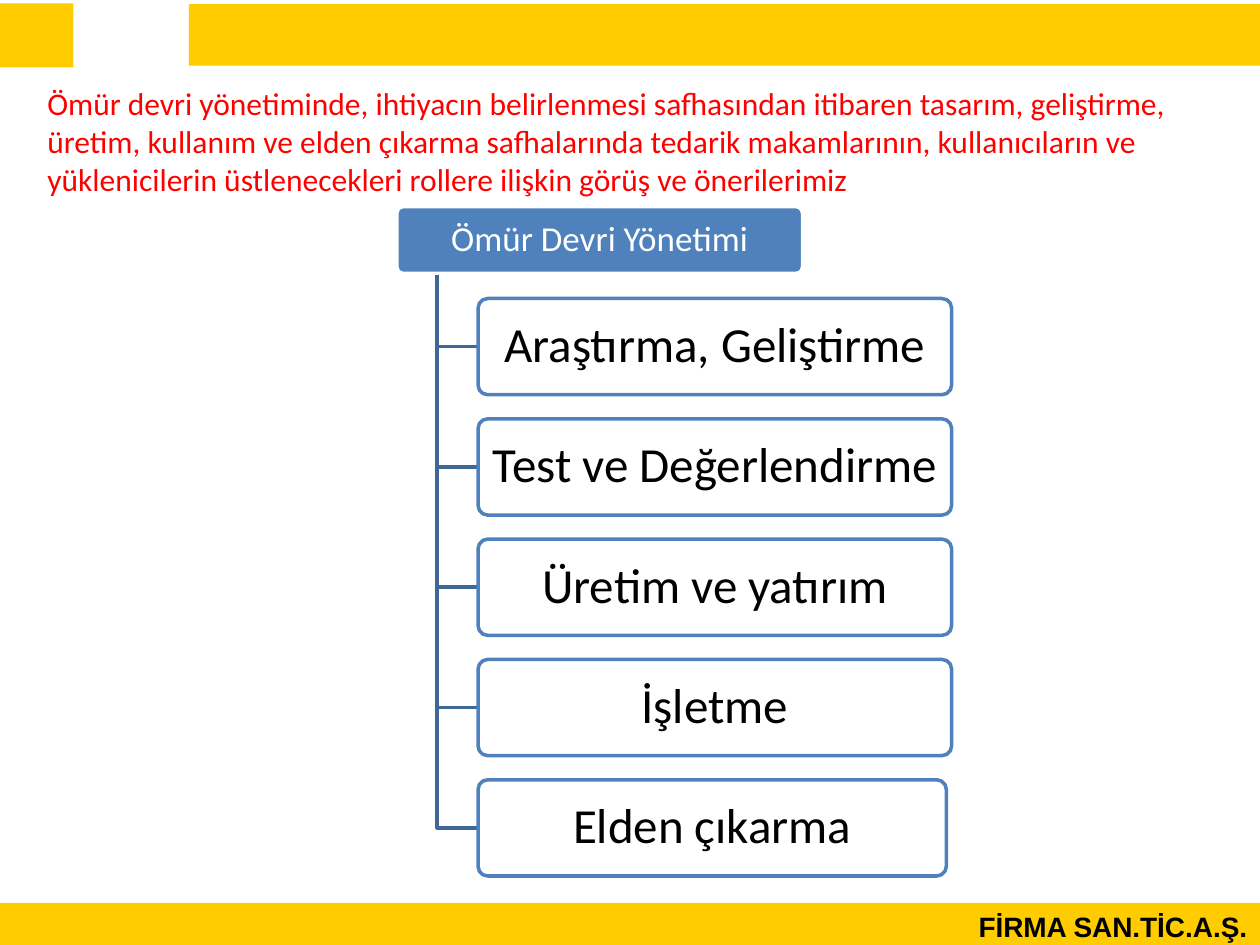
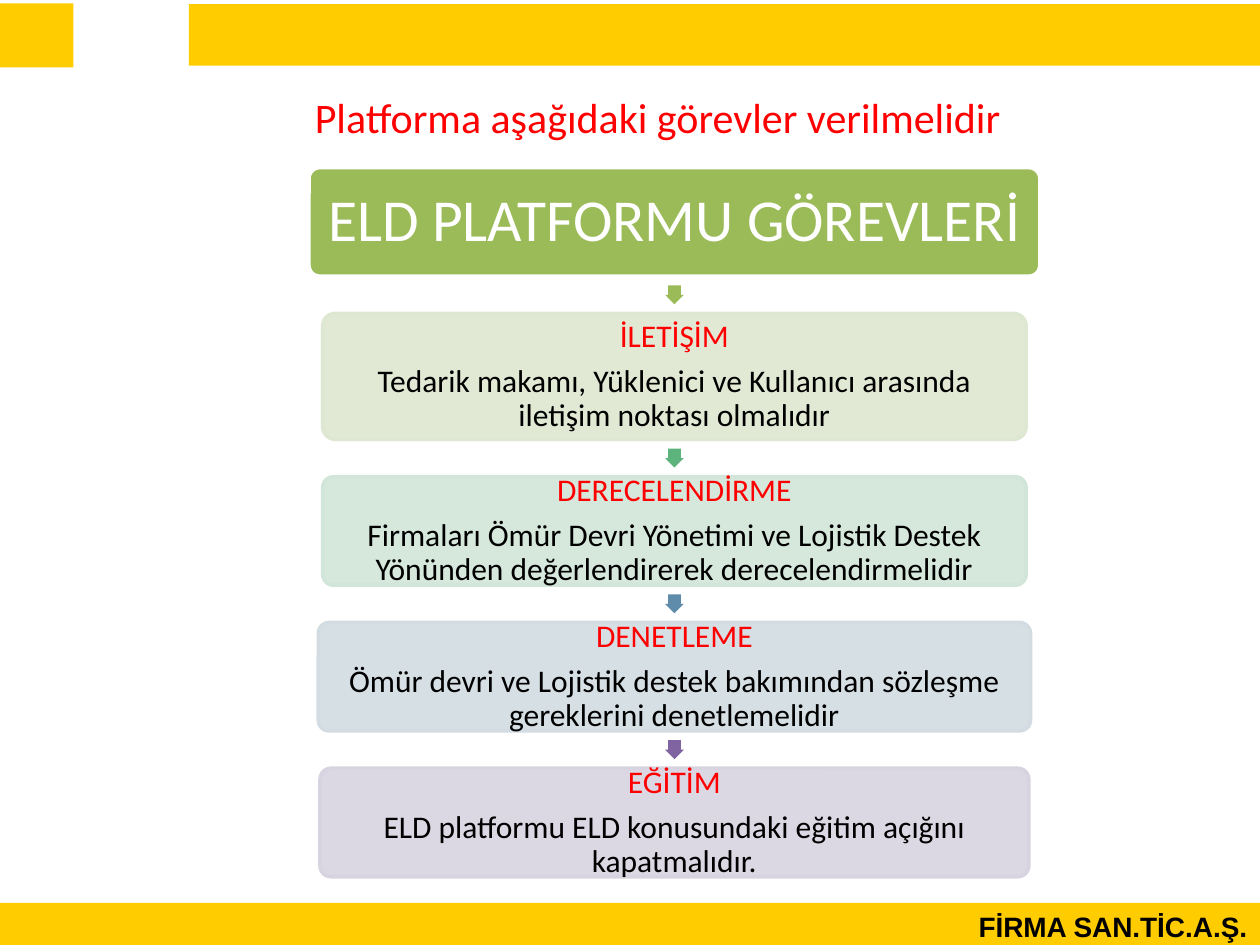
from lxml import etree
from pptx import Presentation
from pptx.dml.color import RGBColor
from pptx.enum.shapes import MSO_SHAPE
from pptx.enum.text import MSO_ANCHOR, PP_ALIGN
from pptx.oxml.ns import qn
from pptx.util import Pt

RECT, ROUND, DOWN = MSO_SHAPE.RECTANGLE, MSO_SHAPE.ROUNDED_RECTANGLE, MSO_SHAPE.DOWN_ARROW
TOP, MIDDLE = MSO_ANCHOR.TOP, MSO_ANCHOR.MIDDLE
LEFT, CENTER, RIGHT = PP_ALIGN.LEFT, PP_ALIGN.CENTER, PP_ALIGN.RIGHT

WIDE, HIGH = 720, 540
HUES = {
    "band": "FFCC00", "white": "FFFFFF", "black": "000000", "red": "FF0000",
    "blue": "4F81BD", "trunk": "3F6797", "green": "9BBB59",
}
STAGES = ["Araştırma, Geliştirme", "Test ve Değerlendirme", "Üretim ve yatırım",
          "İşletme", "Elden çıkarma"]
# heading, detail, height, width, arrow colour, box colour
TASKS = [
    ("İLETİŞİM", "Tedarik makamı, Yüklenici ve Kullanıcı arasında iletişim noktası olmalıdır",
     72, 402, "9BBB59", "DEE7D1"),
    ("DERECELENDİRME", "Firmaları Ömür Devri Yönetimi ve Lojistik Destek Yönünden "
     "değerlendirerek derecelendirmelidir", 62, 402, "5CB37C", "D2E5D9"),
    ("DENETLEME", "Ömür devri ve Lojistik destek bakımından sözleşme gereklerini "
     "denetlemelidir", 62, 407, "608CAB", "D2DCE2"),
    ("EĞİTİM", "ELD platformu ELD konusundaki eğitim açığını kapatmalıdır.",
     62, 405, "8064A2", "D8D3E0"),
]


def tint(name):
    return RGBColor.from_string(HUES.get(name, name))


def write(shape, *lines, size=18, hues=("black",), font="Calibri", bold=False,
          align=LEFT, anchor=TOP, inset=(7.2, 3.6), lead=None, after=0):
    """Fill a shape with one paragraph per line, each in its own colour."""
    frame = shape.text_frame
    frame.word_wrap = True
    frame.vertical_anchor = anchor
    frame.margin_left = frame.margin_right = Pt(inset[0])
    frame.margin_top = frame.margin_bottom = Pt(inset[1])
    for i, (line, hue) in enumerate(zip(lines, hues)):
        para = frame.paragraphs[0] if i == 0 else frame.add_paragraph()
        para.alignment = align
        para.space_after = Pt(after)
        if lead:
            para.line_spacing = lead
        run = para.add_run()
        run.text = line
        run.font.name, run.font.size, run.font.bold = font, Pt(size), bold
        run.font.color.rgb = tint(hue)


def block(slide, kind, x, y, w, h, fill, edge=None, alpha=None):
    shape = slide.shapes.add_shape(kind, Pt(x), Pt(y), Pt(w), Pt(h))
    shape.shadow.inherit = False
    shape.fill.solid()
    shape.fill.fore_color.rgb = tint(fill)
    if edge:
        shape.line.color.rgb = tint(edge)
        shape.line.width = Pt(2)
    else:
        shape.line.fill.background()
    if alpha:
        color = shape._element.spPr.find(qn("a:solidFill"))[0]
        etree.SubElement(color, qn("a:alpha")).set("val", str(alpha * 1000))
    return shape


def card(slide, x, y, w, h, *lines, fill, edge, alpha=None, inset=4, **style):
    """Draw a rounded box with centred text."""
    shape = block(slide, ROUND, x, y, w, h, fill, edge, alpha)
    shape.adjustments[0] = 0.1
    write(shape, *lines, align=CENTER, anchor=MIDDLE, inset=(inset, 3),
          lead=0.9, after=0.35 * style["size"], **style)


def elbow(slide, x, y, w, h):
    """Draw a line that runs down and then right."""
    path = slide.shapes.build_freeform(Pt(x), Pt(y))
    path.add_line_segments([(Pt(x), Pt(y + h)), (Pt(x + w), Pt(y + h))], close=False)
    line = path.convert_to_shape()
    line.shadow.inherit = False
    line.fill.background()
    line.line.color.rgb = tint("trunk")
    line.line.width = Pt(2)


def title(slide, x, y, w, h, text, size):
    box = slide.shapes.add_textbox(Pt(x), Pt(y), Pt(w), Pt(h))
    write(box, text, size=size, hues=["red"])


def page(deck):
    """Add a slide with the shared bands and footer."""
    slide = deck.slides.add_slide(deck.slide_layouts[6])
    block(slide, RECT, 0, 2, 42, 36.5, "band")
    block(slide, RECT, 108, 2.3, WIDE - 108, 35.3, "band")
    foot = block(slide, RECT, 0, 516, WIDE, HIGH - 516, "band")
    write(foot, "FİRMA SAN.TİC.A.Ş.", size=16, font="Arial", bold=True, align=RIGHT)
    return slide


def tree(slide, x, y, w, h):
    """Hang the stages from a root box."""
    root, drop, trunk, shift = 38.2, 52.5, 23, 46.4
    card(slide, x, y, 231.8, root, "Ömür Devri Yönetimi",
         size=20, hues=["white"], fill="blue", edge="white")
    count = len(STAGES)
    tall = (h - drop) / (count + (count - 1) / 4)
    for i, stage in enumerate(STAGES):
        top = y + drop + i * tall * 1.25
        wide = w - shift - (3 if i == count - 1 else 0)
        start = y + root + 0.6
        elbow(slide, x + trunk, start, shift - trunk, top + tall / 2 - start)
        card(slide, x + shift, top, wide, tall, stage,
             size=28, fill="white", edge="blue", alpha=90)


def chain(slide, x, y, w, h):
    """Stack the tasks below a heading, with an arrow in each gap."""
    head, tip = 62, 10.8
    mid = x + w / 2
    gap = (h - head - sum(task[2] for task in TASKS)) / len(TASKS)
    card(slide, x, y, w, head, "ELD PLATFORMU GÖREVLERİ",
         size=34, hues=["white"], fill="green", edge="white")
    top = y + head
    for name, detail, tall, wide, arrow, fill in TASKS:
        mark = block(slide, DOWN, mid - tip / 2, top + (gap - tip) / 2, tip, tip, arrow)
        mark.adjustments[0], mark.adjustments[1] = 0.67, 0.5
        top += gap
        card(slide, mid - wide / 2, top, wide, tall, name, detail, size=18,
             hues=["red", "black"], fill=fill, edge=fill, alpha=90, inset=10)
        top += tall


def main():
    deck = Presentation()
    deck.slide_width, deck.slide_height = Pt(WIDE), Pt(HIGH)

    slide = page(deck)
    title(slide, 20, 44.6, 700, 72.7,
          "Ömür devri yönetiminde, ihtiyacın belirlenmesi safhasından itibaren tasarım, "
          "geliştirme, üretim, kullanım ve elden çıkarma safhalarında tedarik makamlarının, "
          "kullanıcıların ve yüklenicilerin üstlenecekleri rollere ilişkin görüş ve "
          "önerilerimiz", 18)
    tree(slide, 226.8, 118.1, 317, 382.5)

    slide = page(deck)
    title(slide, 172.8, 49, 422, 36, "Platforma aşağıdaki görevler verilmelidir", 24)
    chain(slide, 176.6, 95.8, 417.6, 405.2)

    deck.save("out.pptx")


if __name__ == "__main__":
    main()
